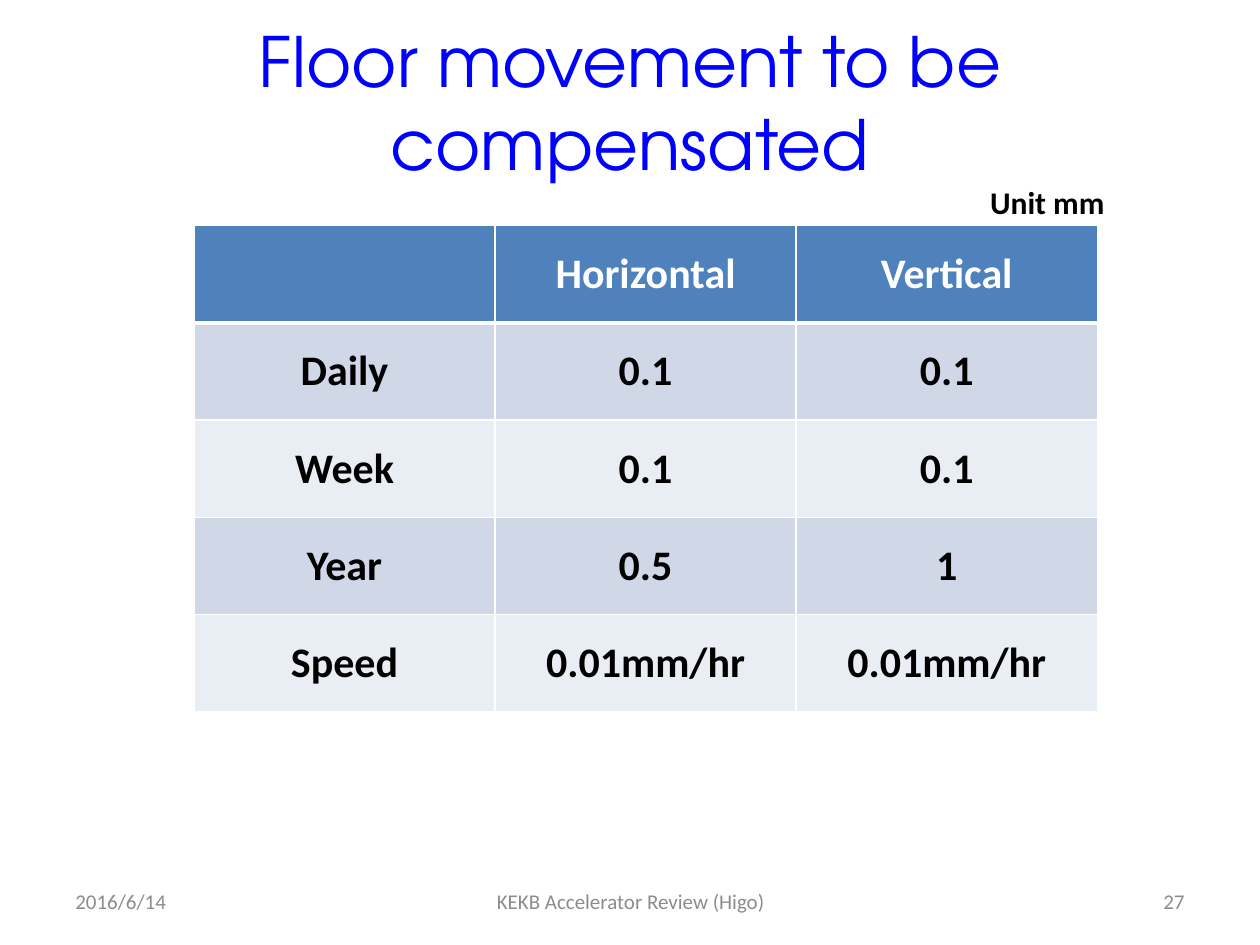
import lxml.etree
import pptx
import pptx.dml.color
import pptx.enum.text
import pptx.oxml.ns
import pptx.util
from pptx.util import Cm

RGBColor = pptx.dml.color.RGBColor
ALIGN = pptx.enum.text.PP_ALIGN
ANCHOR = pptx.enum.text.MSO_ANCHOR
AUTO_SIZE = pptx.enum.text.MSO_AUTO_SIZE

BLUE = RGBColor(0x00, 0x00, 0xFF)
GREY = RGBColor(0x8C, 0x8C, 0x8C)
BLACK = RGBColor(0x00, 0x00, 0x00)
WHITE = RGBColor(0xFF, 0xFF, 0xFF)
HEADER_FILL = RGBColor(0x4F, 0x81, 0xBD)
BAND_FILLS = [RGBColor(0xE9, 0xED, 0xF4), RGBColor(0xD0, 0xD8, 0xE8)]

TITLE = "Floor movement to be compensated"
UNIT = "Unit mm"
MOVEMENTS = [
    ("", "Horizontal", "Vertical"),
    ("Daily", "0.1", "0.1"),
    ("Week", "0.1", "0.1"),
    ("Year", "0.5", "1"),
    ("Speed", "0.01mm/hr", "0.01mm/hr"),
]
# text, left, width, alignment
FOOTERS = [
    ("2016/6/14", 1.27, 5.92, ALIGN.LEFT),
    ("KEKB Accelerator Review (Higo)", 8.69, 8.05, ALIGN.CENTER),
    ("27", 18.21, 5.92, ALIGN.RIGHT),
]
COLUMN_WIDTH, ROW_HEIGHT = 6.07, 1.96


def write(frame, text, *, size, color, font="Calibri", bold=False,
          align=ALIGN.LEFT, anchor=ANCHOR.MIDDLE, wrap=True):
    frame.word_wrap = wrap
    frame.vertical_anchor = anchor
    para = frame.paragraphs[0]
    para.alignment = align
    span = para.add_run()
    span.text = text
    span.font.name = font
    span.font.size = pptx.util.Pt(size)
    span.font.bold = bold
    span.font.color.rgb = color


def add_borders(cell, bottom, top):
    """Draw white cell borders; they must precede the fill in the cell XML."""
    properties = cell._tc.get_or_add_tcPr()
    widths = {"a:lnL": 1, "a:lnR": 1, "a:lnT": top, "a:lnB": bottom}
    for index, (tag, width) in enumerate(widths.items()):
        line = lxml.etree.Element(pptx.oxml.ns.qn(tag), w=str(pptx.util.Pt(width)))
        fill = lxml.etree.SubElement(line, pptx.oxml.ns.qn("a:solidFill"))
        lxml.etree.SubElement(fill, pptx.oxml.ns.qn("a:srgbClr"), val=str(WHITE))
        properties.insert(index, line)


def add_movement_table(slide):
    rows, columns = len(MOVEMENTS), len(MOVEMENTS[0])
    table = slide.shapes.add_table(
        rows, columns, Cm(3.91), Cm(4.55),
        Cm(COLUMN_WIDTH * columns), Cm(ROW_HEIGHT * rows)).table
    for column in table.columns:
        column.width = Cm(COLUMN_WIDTH)
    for r, values in enumerate(MOVEMENTS):
        table.rows[r].height = Cm(ROW_HEIGHT)
        header = r == 0
        for c, value in enumerate(values):
            cell = table.cell(r, c)
            cell.fill.solid()
            cell.fill.fore_color.rgb = HEADER_FILL if header else BAND_FILLS[r % 2]
            add_borders(cell, bottom=3 if header else 1, top=3 if r == 1 else 1)
            cell.vertical_anchor = ANCHOR.MIDDLE
            if value:
                write(cell.text_frame, value, size=24, bold=True, anchor=None,
                      wrap=None, align=ALIGN.CENTER,
                      color=WHITE if header else BLACK)


def main():
    deck = pptx.Presentation()
    deck.slide_width, deck.slide_height = Cm(25.4), Cm(19.05)
    slide = deck.slides.add_slide(deck.slide_layouts[5])

    title = slide.shapes.title
    title.left, title.top, title.width, title.height = Cm(0), Cm(0.46), Cm(25.4), Cm(3.18)
    title.text_frame.auto_size = AUTO_SIZE.NONE
    write(title.text_frame, TITLE, size=39.6, color=BLUE,
          font="TeX Gyre Adventor", align=ALIGN.CENTER)

    for text, left, width, align in FOOTERS:
        box = slide.shapes.add_textbox(Cm(left), Cm(17.65), Cm(width), Cm(1.02))
        write(box.text_frame, text, size=12, color=GREY, align=align)

    add_movement_table(slide)

    box = slide.shapes.add_textbox(Cm(19.71), Cm(3.56), Cm(2.84), Cm(1.02))
    box.text_frame.auto_size = AUTO_SIZE.SHAPE_TO_FIT_TEXT
    write(box.text_frame, UNIT, size=18, color=BLACK, bold=True,
          anchor=ANCHOR.TOP, wrap=False)

    deck.save("out.pptx")


if __name__ == "__main__":
    main()
